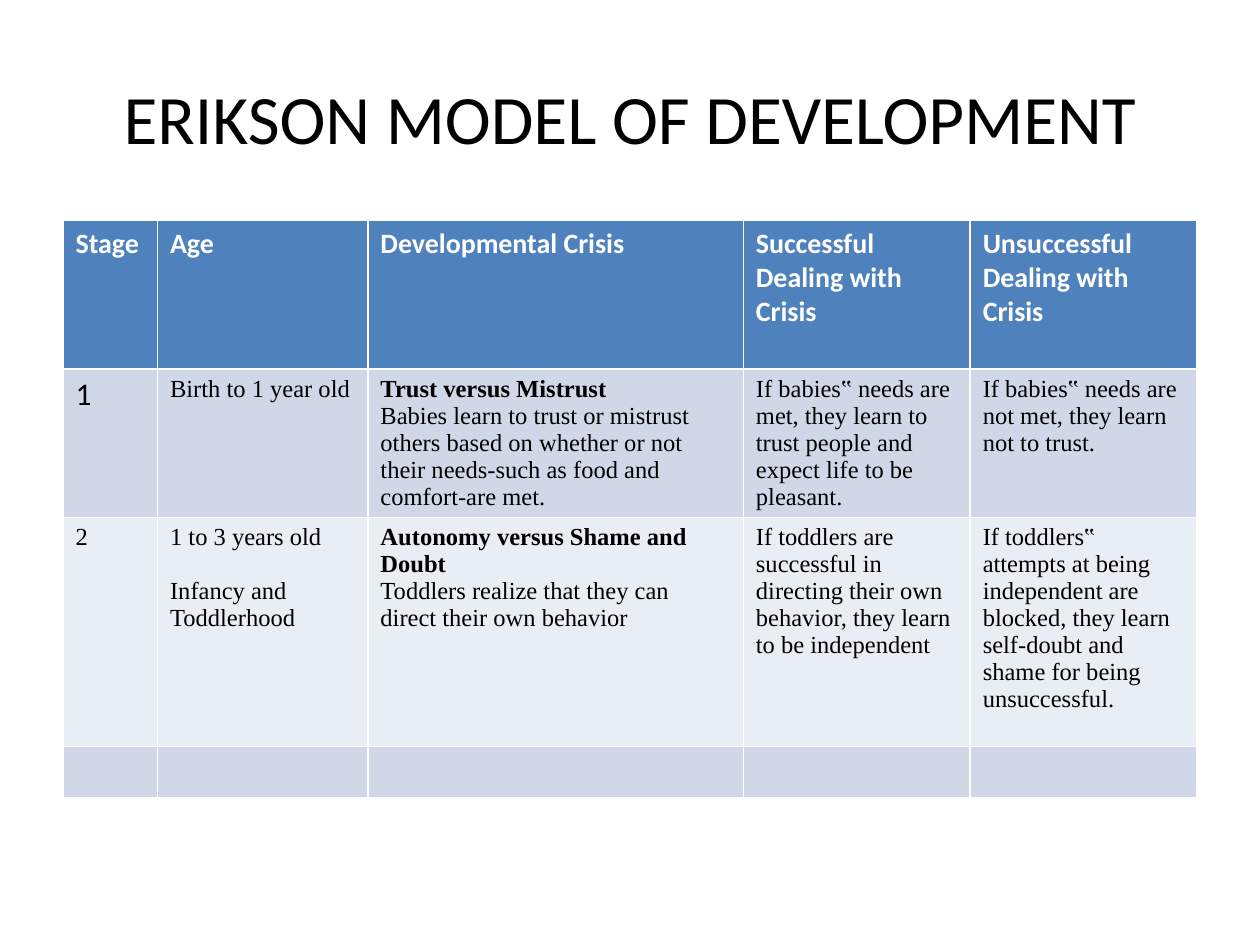
"""Build the slide with the table of Erikson's first two stages."""
import pptx
import pptx.util
import pptx.dml.color
import pptx.enum.text

Inches, Pt = pptx.util.Inches, pptx.util.Pt
RGBColor = pptx.dml.color.RGBColor

BLACK = RGBColor(0x00, 0x00, 0x00)
WHITE = RGBColor(0xFF, 0xFF, 0xFF)
BLUE = RGBColor(0x4F, 0x81, 0xBD)
BANDS = [RGBColor(0xE9, 0xED, 0xF4), RGBColor(0xD0, 0xD8, 0xE8)]
SANS, SERIF = "Calibri", "Times New Roman"

TITLE = "ERIKSON MODEL OF DEVELOPMENT"
HEADS = ["Stage", "Age", "Developmental Crisis",
         "Successful Dealing with Crisis", "Unsuccessful Dealing with Crisis"]
STAGES = [
    ["1", "Birth to 1 year old",
     "Trust versus Mistrust\nBabies learn to trust or mistrust others based on "
     "whether or not their needs-such as food and comfort-are met.",
     "If babies‟ needs are met, they learn to trust people and expect life "
     "to be pleasant.",
     "If babies‟ needs are not met, they learn not to trust."],
    ["2", "1 to 3 years old\nInfancy and Toddlerhood",
     "Autonomy versus Shame and Doubt\nToddlers realize that they can direct "
     "their own behavior",
     "If toddlers are successful in directing their own behavior, they learn "
     "to be independent",
     "If toddlers‟ attempts at being independent are blocked, they learn "
     "self-doubt and shame for being unsuccessful."],
    [""] * len(HEADS),
]
WIDTHS = [0.75, 1.67, 2.98, 1.8, 1.8]
HEIGHTS = [1.18, 1.17, 1.82, 0.41]
AGE, CRISIS = 1, 2


def style(para, font, size, color, bold=False):
    for run in para.runs:
        run.font.name = font
        run.font.size = Pt(size)
        run.font.color.rgb = color
        run.font.bold = bold


def place(shape, left, top, width, height):
    shape.left, shape.top = Inches(left), Inches(top)
    shape.width, shape.height = Inches(width), Inches(height)


def fill_cell(cell, text, row, col):
    cell.fill.solid()
    cell.fill.fore_color.rgb = BANDS[row % 2] if row else BLUE
    cell.text_frame.text = text
    for num, para in enumerate(cell.text_frame.paragraphs):
        if row == 0:
            style(para, SANS, 16, WHITE, True)
        elif (row, col) == (1, 0):
            style(para, SANS, 18, BLACK)
        else:
            style(para, SERIF, 14, BLACK, col == CRISIS and num == 0)
        if col == AGE and num:
            para.space_before = Pt(15.5)


def main():
    deck = pptx.Presentation()
    deck.slide_width, deck.slide_height = Inches(10), Inches(7.5)
    slide = deck.slides.add_slide(deck.slide_layouts[5])

    title = slide.shapes.title
    place(title, 0.5, 0.3, 9, 1.25)
    title.text_frame.text = TITLE
    title.text_frame.vertical_anchor = pptx.enum.text.MSO_ANCHOR.MIDDLE
    head = title.text_frame.paragraphs[0]
    head.alignment = pptx.enum.text.PP_ALIGN.CENTER
    style(head, SANS, 39.6, BLACK)

    rows = [HEADS] + STAGES
    table = slide.shapes.add_table(
        len(rows), len(HEADS), Inches(0.5), Inches(1.75),
        Inches(sum(WIDTHS)), Inches(sum(HEIGHTS))).table
    for col, width in enumerate(WIDTHS):
        table.columns[col].width = Inches(width)
    for row, texts in enumerate(rows):
        table.rows[row].height = Inches(HEIGHTS[row])
        for col, text in enumerate(texts):
            fill_cell(table.cell(row, col), text, row, col)

    deck.save("out.pptx")


if __name__ == "__main__":
    main()
